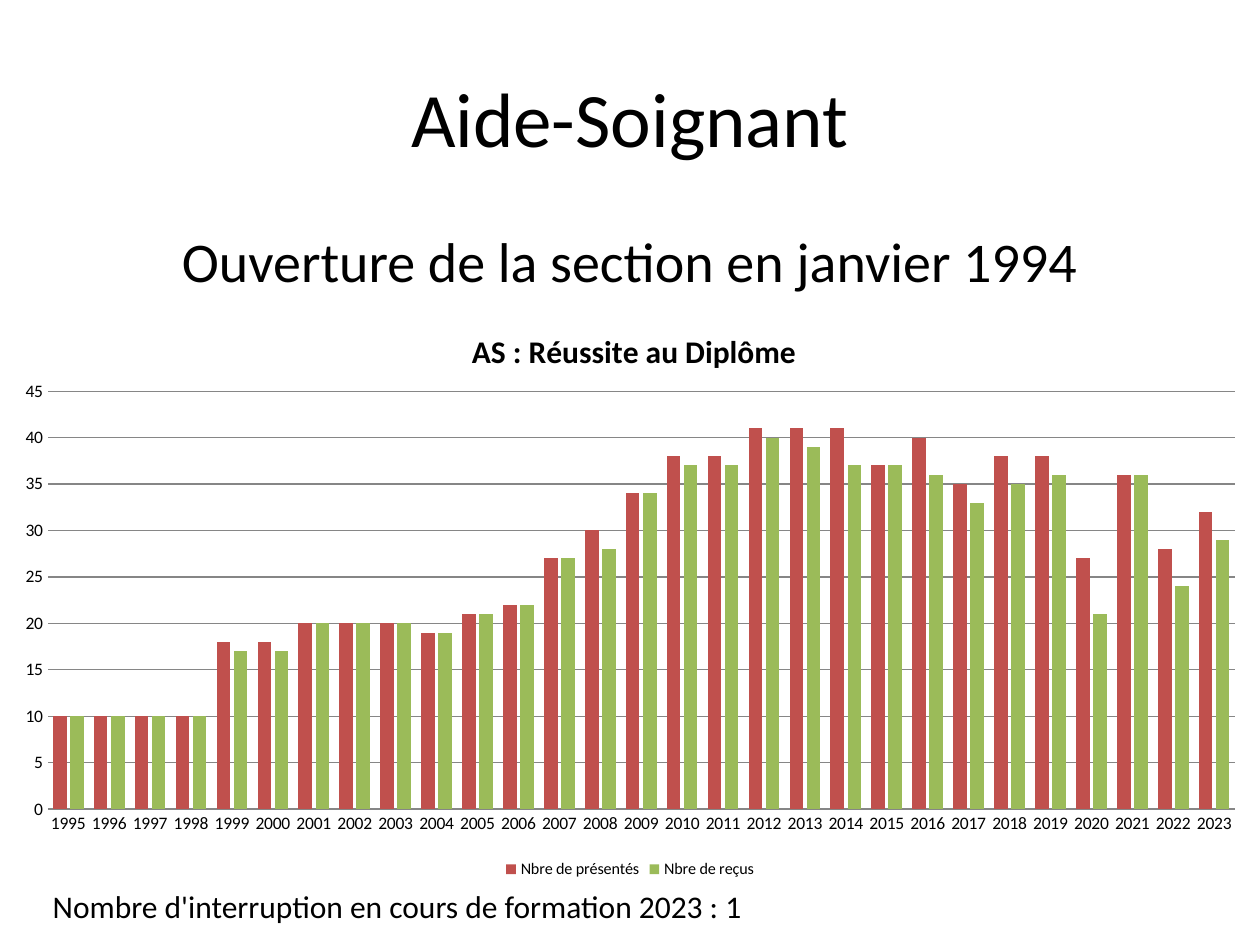
from lxml import etree
from pptx import Presentation
from pptx import util as u
from pptx.chart.data import CategoryChartData
from pptx.dml.color import RGBColor
from pptx.enum import chart as charts, text
from pptx.oxml import ns

FONT = "Calibri"
COLORS = {"text": "000000", "grid": "868686", "presented": "C0504D", "passed": "9BBB59"}
YEARS = range(1995, 2024)
PRESENTED = [10, 10, 10, 10, 18, 18, 20, 20, 20, 19, 21, 22, 27, 30, 34,
             38, 38, 41, 41, 41, 37, 40, 35, 38, 38, 27, 36, 28, 32]
PASSED = [10, 10, 10, 10, 17, 17, 20, 20, 20, 19, 21, 22, 27, 28, 34,
          37, 37, 40, 39, 37, 37, 36, 33, 35, 36, 21, 36, 24, 29]
SERIES = [("Nbre de présentés", PRESENTED, "presented"), ("Nbre de reçus", PASSED, "passed")]


def color(name):
    return RGBColor.from_string(COLORS[name])


def style_font(font, size, bold=False):
    font.name, font.size, font.bold = FONT, u.Pt(size), bold
    font.color.rgb = color("text")


def share_box(presentation, left, top, width, height):
    """Turn shares of the slide's size into lengths."""
    across, down = presentation.slide_width, presentation.slide_height
    return [u.Emu(int(part)) for part in
            (left * across, top * down, width * across, height * down)]


def add_text(slide, box, wording, size, align=text.PP_ALIGN.CENTER, anchor=text.MSO_ANCHOR.TOP):
    frame = slide.shapes.add_textbox(*box).text_frame
    frame.word_wrap = True
    frame.vertical_anchor = anchor
    paragraph = frame.paragraphs[0]
    paragraph.alignment = align
    run = paragraph.add_run()
    run.text = wording
    style_font(run.font, size)


def set_layout(parent, before, target=None, **shares):
    """Place a chart part by shares of the chart's size."""
    for old in parent.findall(ns.qn("c:layout")):
        parent.remove(old)
    layout = etree.Element(ns.qn("c:layout"))
    manual = etree.SubElement(layout, ns.qn("c:manualLayout"))
    settings = {"layoutTarget": target} if target else {}
    settings.update(xMode="edge", yMode="edge", **shares)
    for tag, value in settings.items():
        etree.SubElement(manual, ns.qn("c:" + tag)).set("val", str(value))
    parent.find(ns.qn(before)).addprevious(layout)


def style_axes(chart):
    for axis in (chart.category_axis, chart.value_axis):
        axis.major_tick_mark = axis.minor_tick_mark = charts.XL_TICK_MARK.NONE
        style_font(axis.tick_labels.font, 10)
    value_axis = chart.value_axis
    value_axis.minimum_scale, value_axis.maximum_scale, value_axis.major_unit = 0, 45, 5
    value_axis.format.line.fill.background()
    for line in (value_axis.major_gridlines.format.line, chart.category_axis.format.line):
        line.color.rgb = color("grid")
        line.width = u.Pt(0.75)


def add_results_chart(slide, box):
    data = CategoryChartData()
    data.categories = [str(year) for year in YEARS]
    for name, values, _ in SERIES:
        data.add_series(name, values)
    chart = slide.shapes.add_chart(charts.XL_CHART_TYPE.COLUMN_CLUSTERED, *box, data).chart
    style_font(chart.font, 10)

    chart.has_title = True
    title_run = chart.chart_title.text_frame.paragraphs[0].add_run()
    title_run.text = "AS : Réussite au Diplôme"
    style_font(title_run.font, 18, bold=True)
    title = chart.chart_title._element
    set_layout(title, "c:overlay", x=0.37, y=0.05)

    plot = chart.plots[0]
    plot.vary_by_categories = False
    plot.gap_width, plot.overlap = 75, -25
    for series, (_, _, fill) in zip(plot.series, SERIES):
        series.format.fill.solid()
        series.format.fill.fore_color.rgb = color(fill)
    style_axes(chart)
    set_layout(title.getparent().find(ns.qn("c:plotArea")), "c:barChart", "inner",
               x=0.038, y=0.165, w=0.942, h=0.709)

    chart.has_legend = True
    chart.legend.position = charts.XL_LEGEND_POSITION.BOTTOM
    chart.legend.include_in_layout = False
    style_font(chart.legend.font, 9.2)


def build_slide(presentation):
    slide = presentation.slides.add_slide(presentation.slide_layouts[6])
    add_text(slide, share_box(presentation, 0.05, 0.04, 0.9, 0.167), "Aide-Soignant", 44,
             anchor=text.MSO_ANCHOR.MIDDLE)
    add_text(slide, share_box(presentation, 0.05, 0.233, 0.9, 0.66),
             "Ouverture de la section en janvier 1994", 32)
    add_text(slide, share_box(presentation, 0.032, 0.932, 0.645, 0.053),
             "Nombre d'interruption en cours de formation 2023 : 1", 18,
             align=text.PP_ALIGN.LEFT)
    add_results_chart(slide, share_box(presentation, 0, 0.311, 1, 0.624))


def main():
    presentation = Presentation()
    presentation.slide_width, presentation.slide_height = u.Inches(10), u.Inches(7.5)
    build_slide(presentation)
    presentation.save("out.pptx")


if __name__ == "__main__":
    main()
